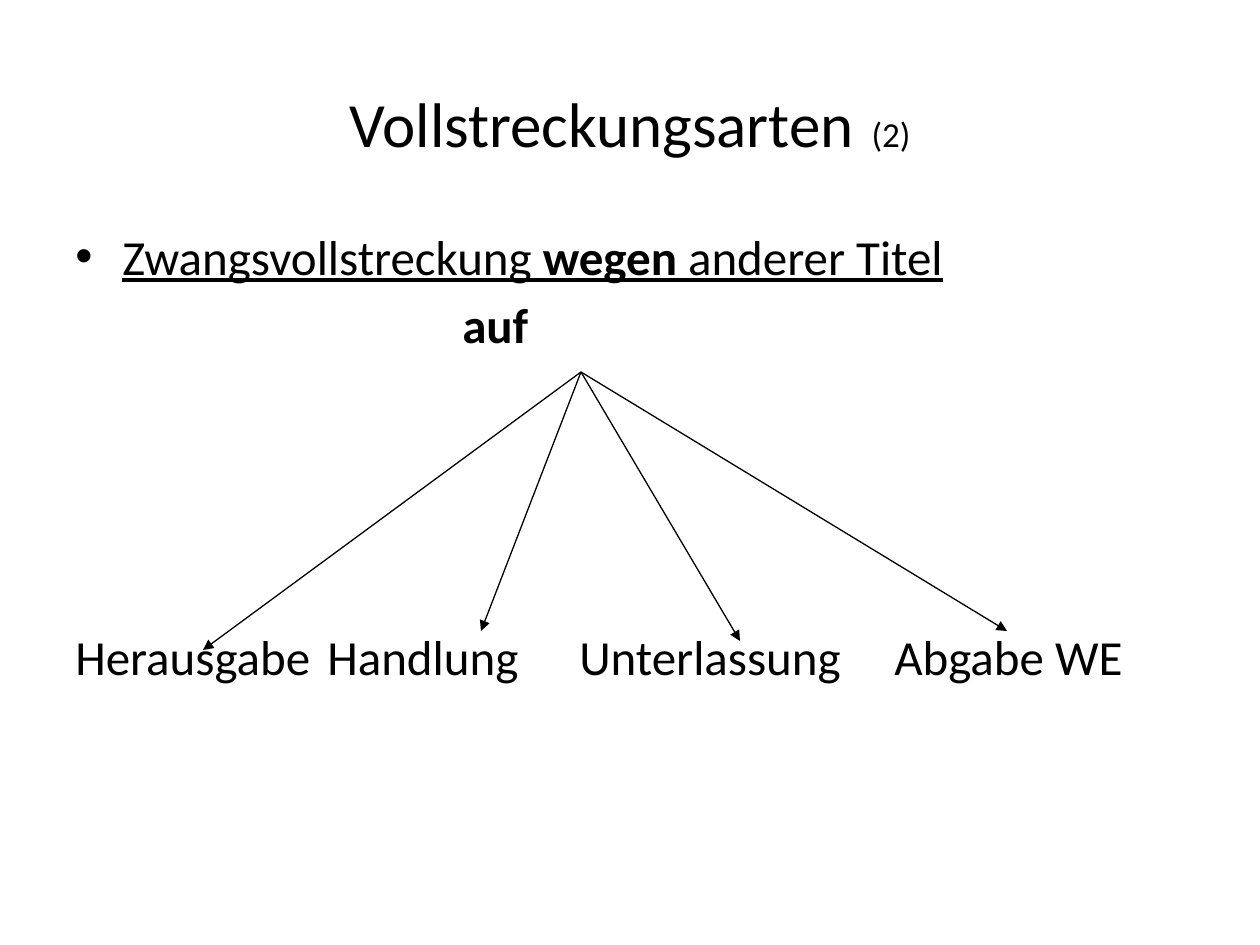
from pptx import Presentation
from pptx.dml.color import RGBColor
from pptx.enum.shapes import MSO_CONNECTOR
from pptx.enum.text import MSO_ANCHOR, MSO_AUTO_SIZE, PP_ALIGN
from pptx.oxml.ns import qn
from pptx.util import Pt
from lxml.etree import SubElement

BLACK = RGBColor(0, 0, 0)
WHITE = RGBColor(255, 255, 255)
FONT = "Calibri"
SCALE = 914400 / 126

TITLE = [("Vollstreckungsarten", {"size": Pt(36)}),
         (" ", {"size": Pt(44)}),
         ("(2)", {"size": Pt(20)})]
KINDS = ["Herausgabe", "Handlung", "Unterlassung", "Abgabe WE"]
STOPS = [257, 537, 809]
LINES = [
    {"runs": [("Zwangsvollstreckung ", {"underline": True}),
              ("wegen ", {"underline": True, "bold": True}),
              ("anderer Titel", {"underline": True})],
     "left": 47, "hang": 47, "bullet": "•"},
    {"runs": [("auf", {"bold": True})], "left": 387, "gap": 5.6},
    {"runs": [("\t".join(KINDS), {})], "gap": 156, "stops": STOPS},
]
TITLE_BOX = (63, 38, 1134, 157)
BODY_BOX = (63, 220, 1134, 624)
START = (581, 372)
ENDS = [(203, 650), (481, 631), (740, 641), (1007, 631)]


def px(num):
    return round(num * SCALE)


def place(shape, box):
    for name, num in zip(("left", "top", "width", "height"), box):
        setattr(shape, name, px(num))


def add_runs(para, runs):
    for text, form in runs:
        run = para.add_run()
        run.text = text
        run.font.color.rgb = BLACK
        for name, val in {"name": FONT, "size": Pt(28), **form}.items():
            setattr(run.font, name, val)


def set_indent(para, line):
    """Set the margin, bullet and tab stops of a paragraph."""
    props = para._p.get_or_add_pPr()
    props.set("marL", str(px(line.get("left", 0))))
    props.set("indent", str(-px(line.get("hang", 0))))
    if "bullet" in line:
        SubElement(props, qn("a:buFont"), typeface="Arial")
        SubElement(props, qn("a:buChar"), char=line["bullet"])
    if "stops" in line:
        tabs = SubElement(props, qn("a:tabLst"))
        for stop in line["stops"]:
            SubElement(tabs, qn("a:tab"), pos=str(px(stop)), algn="l")


def add_arrow(shapes, start, end):
    arrow = shapes.add_connector(MSO_CONNECTOR.STRAIGHT, *map(px, start + end))
    arrow.line.color.rgb = BLACK
    arrow.line.width = Pt(0.75)
    SubElement(arrow.line._get_or_add_ln(), qn("a:tailEnd"), type="triangle")
    SubElement(arrow._element.spPr, qn("a:effectLst"))


def main():
    deck = Presentation()
    deck.slide_width, deck.slide_height = px(1260), px(945)
    slide = deck.slides.add_slide(deck.slide_layouts[5])
    slide.background.fill.solid()
    slide.background.fill.fore_color.rgb = WHITE

    title = slide.shapes.title
    place(title, TITLE_BOX)
    frame = title.text_frame
    frame.auto_size = MSO_AUTO_SIZE.NONE
    frame.vertical_anchor = MSO_ANCHOR.MIDDLE
    frame.paragraphs[0].alignment = PP_ALIGN.CENTER
    add_runs(frame.paragraphs[0], TITLE)

    body = slide.shapes.add_textbox(*map(px, BODY_BOX)).text_frame
    body.word_wrap = True
    for num, line in enumerate(LINES):
        para = body.add_paragraph() if num else body.paragraphs[0]
        set_indent(para, line)
        if "gap" in line:
            para.space_before = Pt(line["gap"])
        add_runs(para, line["runs"])

    for end in ENDS:
        add_arrow(slide.shapes, START, end)
    deck.save("out.pptx")


if __name__ == "__main__":
    main()
